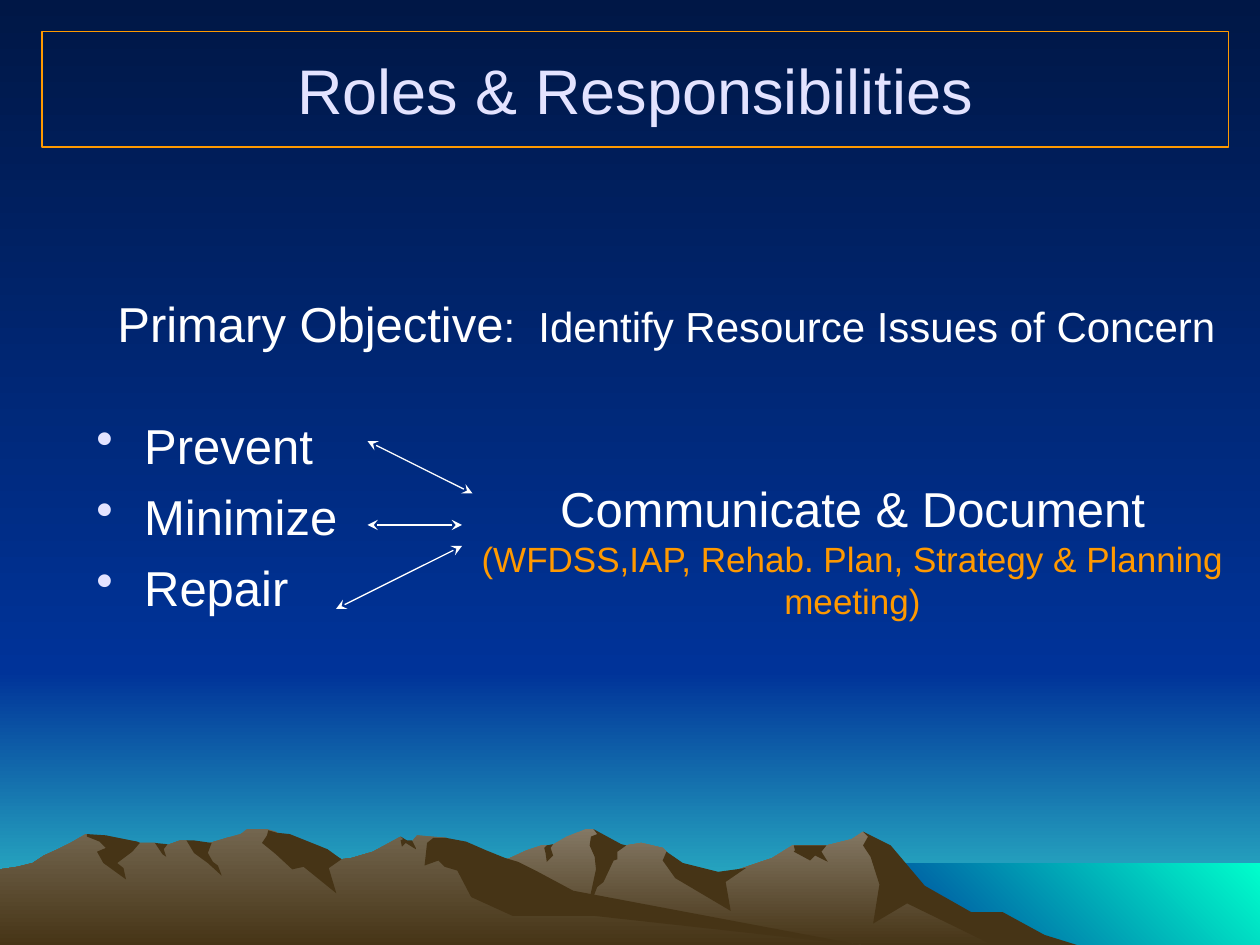
from dataclasses import dataclass
from typing import Optional

import pptx
import pptx.dml.color
import pptx.enum.shapes
import pptx.enum.text
import pptx.oxml
import pptx.oxml.ns
import pptx.util

ALIGN = pptx.enum.text.PP_ALIGN
ANCHOR = pptx.enum.text.MSO_ANCHOR
CELL = pptx.util.Inches(1 / 12)  # grid of 120 columns by 90 rows
TERRAIN_UNIT = pptx.util.Inches(0.01)  # landscape outlines are in these units
FONT = "Arial"
WHITE, LAVENDER, ORANGE = "FFFFFF", "E3E3FF", "FF9900"
NIGHT, BLUE, TURQUOISE, AQUA = "001746", "003399", "33CCCC", "00FFCC"
EARTH, FAR_ROCK, NEAR_ROCK = "463416", "847864", "73664F"


@dataclass
class Terrain:
    outline: list
    start: str
    end: Optional[str] = None  # a second colour makes a gradient
    angle: int = 270


@dataclass
class Words:
    text: str
    size: int
    color: str = WHITE


@dataclass
class Arrow:
    start: tuple
    end: tuple


def block(left: int, top: int, right: int, bottom: int) -> list:
    return [(right, bottom), (left, bottom), (left, top), (right, top)]


SKY = Terrain(block(0, 0, 1000, 533), NIGHT, BLUE)
HORIZON = Terrain(block(0, 533, 1000, 750), BLUE, TURQUOISE)
SEA = Terrain(block(683, 685, 1000, 752), BLUE, AQUA, 45)
FAR_RANGE = Terrain([
    (802, 740), (778, 727), (764, 723), (723, 698), (702, 671), (685, 660), (676, 666),
    (656, 671), (629, 671), (613, 681), (566, 697), (536, 690), (529, 676), (526, 673),
    (509, 669), (497, 671), (486, 673), (474, 661), (471, 658), (465, 658), (450, 664),
    (438, 671), (430, 671), (418, 675), (405, 681), (394, 685), (355, 698), (327, 709),
    (277, 739), (258, 751), (821, 751)], FAR_ROCK, EARTH)
NEAR_RANGE = Terrain([
    (690, 751), (667, 748), (432, 712), (354, 665), (331, 663), (327, 668), (323, 668),
    (318, 664), (296, 676), (279, 681), (271, 682), (260, 676), (236, 681), (223, 663),
    (219, 660), (212, 658), (196, 658), (191, 662), (180, 665), (160, 671), (148, 667),
    (143, 667), (132, 671), (128, 671), (123, 669), (111, 669), (94, 671), (68, 662),
    (56, 669), (46, 674), (35, 679), (26, 685), (14, 688), (0, 690), (0, 751)],
    NEAR_ROCK, EARTH)
FAR_SHADOWS = [
    [(796, 724), (771, 724), (734, 703), (707, 671), (685, 660), (689, 664), (685, 671),
     (691, 680), (698, 702), (693, 733), (720, 717), (792, 752), (858, 751), (829, 742)],
    [(471, 658), (474, 662), (469, 664), (468, 671), (472, 680), (473, 690), (465, 727),
     (474, 704), (479, 700), (487, 683), (490, 682), (490, 676), (497, 671), (493, 670)],
    [(529, 676), (526, 683), (536, 697), (580, 723), (576, 700), (592, 689), (570, 692),
     (542, 685)],
    [(650, 671), (630, 671), (631, 675), (630, 676), (643, 683), (647, 679), (657, 684),
     (652, 676), (656, 671)],
    [(433, 677), (432, 673), (434, 671), (439, 670), (437, 673), (439, 679), (434, 684)],
]
NEAR_SHADOWS = [
    [(212, 663), (208, 669), (219, 678), (232, 690), (241, 688), (267, 709), (261, 689),
     (271, 682), (260, 674), (245, 668), (230, 662), (220, 661), (213, 659)],
    [(370, 668), (354, 665), (344, 665), (339, 669), (337, 687), (348, 683), (353, 688),
     (363, 691), (374, 712), (407, 727), (472, 727), (690, 751), (683, 750), (455, 707),
     (427, 692), (411, 684), (401, 681), (386, 675)],
    [(318, 667), (320, 666), (318, 664), (323, 667), (327, 667), (330, 673), (330, 674),
     (322, 669), (319, 672)],
    [(154, 667), (168, 669), (165, 677), (169, 684), (173, 687), (176, 695), (165, 685),
     (154, 677), (148, 667)],
    [(133, 670), (130, 674), (132, 680), (129, 678), (123, 669)],
    [(109, 668), (111, 669), (105, 676), (93, 685), (98, 689), (100, 698), (82, 685),
     (77, 676), (84, 673), (79, 668), (69, 664), (69, 662), (84, 663), (94, 665)],
]
LANDSCAPE = [HORIZON, SKY, SEA, FAR_RANGE,
             *(Terrain(shadow, EARTH) for shadow in FAR_SHADOWS), NEAR_RANGE,
             *(Terrain(shadow, EARTH) for shadow in NEAR_SHADOWS)]

GOALS = ["Prevent", "Minimize", "Repair"]
GOAL_ARROWS = [Arrow((35, 42), (45, 47)), Arrow((35, 50), (44, 50)),
               Arrow((32, 58), (44, 52))]


def rgb(color: str):
    return pptx.dml.color.RGBColor.from_string(color)


def cells(*counts: float) -> list:
    return [round(CELL * count) for count in counts]


def paint_gradient(fill, start: str, end: str, angle: int = 270) -> None:
    fill.gradient()
    fill.gradient_angle = angle
    for stop, position, color in zip(fill.gradient_stops, (0, 1), (start, end)):
        stop.position = position
        stop.color.rgb = rgb(color)


def draw_terrain(slide, terrain: Terrain) -> None:
    first, *others = terrain.outline
    builder = slide.shapes.build_freeform(*first, scale=TERRAIN_UNIT)
    builder.add_line_segments(others, close=True)
    land = builder.convert_to_shape()
    land.shadow.inherit = False
    land.line.fill.background()
    if terrain.end:
        paint_gradient(land.fill, terrain.start, terrain.end, terrain.angle)
    else:
        land.fill.solid()
        land.fill.fore_color.rgb = rgb(terrain.start)


def write(paragraph, words: list, align=ALIGN.LEFT) -> None:
    paragraph.alignment = align
    for part in words:
        run = paragraph.add_run()
        run.text = part.text
        run.font.name = FONT
        run.font.size = pptx.util.Pt(part.size)
        run.font.color.rgb = rgb(part.color)


def add_bullet(paragraph, color: str) -> None:
    properties = paragraph._p.get_or_add_pPr()
    indent = pptx.util.Inches(0.38)
    properties.set("marL", str(indent))
    properties.set("indent", str(-indent))
    tint = pptx.oxml.ns.qn("a:buClr")
    properties.append(properties.makeelement(tint, {}))
    swatch = properties.makeelement(pptx.oxml.ns.qn("a:srgbClr"), {"val": color})
    properties.find(tint).append(swatch)
    mark = properties.makeelement(pptx.oxml.ns.qn("a:buChar"), {"char": "•"})
    properties.append(mark)


def draw_text(slide, area: tuple, lines: list, align=ALIGN.LEFT, wrap: bool = True,
              bullet: Optional[str] = None, gap: float = 0) -> None:
    frame = slide.shapes.add_textbox(*cells(*area)).text_frame
    frame.word_wrap = wrap
    for number, words in enumerate(lines):
        paragraph = frame.add_paragraph() if number else frame.paragraphs[0]
        if number and gap:
            paragraph.space_before = pptx.util.Pt(gap)
        if bullet:
            add_bullet(paragraph, bullet)
        write(paragraph, words, align)


def draw_title(slide, text: str) -> None:
    title = slide.shapes.add_shape(pptx.enum.shapes.MSO_SHAPE.RECTANGLE,
                                   *cells(4, 3, 113, 11))
    title.shadow.inherit = False
    title.fill.background()
    title.line.color.rgb = rgb(ORANGE)
    title.line.width = pptx.util.Pt(0.75)
    title.text_frame.vertical_anchor = ANCHOR.MIDDLE
    write(title.text_frame.paragraphs[0], [Words(text, 36, LAVENDER)], ALIGN.CENTER)


def draw_arrow(slide, arrow: Arrow) -> None:
    link = slide.shapes.add_connector(pptx.enum.shapes.MSO_CONNECTOR.STRAIGHT,
                                      *cells(*arrow.start, *arrow.end))
    link.line.color.rgb = rgb(WHITE)
    link.line.width = pptx.util.Pt(0.75)
    stroke = link.line._get_or_add_ln()
    for tip in ("a:headEnd", "a:tailEnd"):
        stroke.append(stroke.makeelement(pptx.oxml.ns.qn(tip), {"type": "stealth"}))
    properties = link._element.spPr
    properties.append(properties.makeelement(pptx.oxml.ns.qn("a:effectLst"), {}))


def main() -> None:
    deck = pptx.Presentation()
    deck.slide_width, deck.slide_height = cells(120, 90)
    slide = deck.slides.add_slide(deck.slide_layouts[6])

    # Sky, sea and mountains
    paint_gradient(slide.background.fill, NIGHT, BLUE)
    for terrain in LANDSCAPE:
        draw_terrain(slide, terrain)

    # Title and objective
    draw_title(slide, "Roles & Responsibilities")
    draw_text(slide, (10, 27.4, 107.2, 6.8), [
        [Words("Primary Objective", 28),
         Words(":  Identify Resource Issues of Concern", 24)]], wrap=False)

    # Goals, linked to the communication duty
    draw_text(slide, (8, 39, 30, 26), [[Words(goal, 28)] for goal in GOALS],
              bullet=LAVENDER, gap=7)
    for arrow in GOAL_ARROWS:
        draw_arrow(slide, arrow)
    draw_text(slide, (44, 45, 74.4, 15), [
        [Words("Communicate & Document", 28)],
        [Words("(WFDSS,IAP, Rehab. Plan, Strategy & Planning meeting)", 20, ORANGE)]],
        align=ALIGN.CENTER)

    deck.save("out.pptx")


if __name__ == "__main__":
    main()
